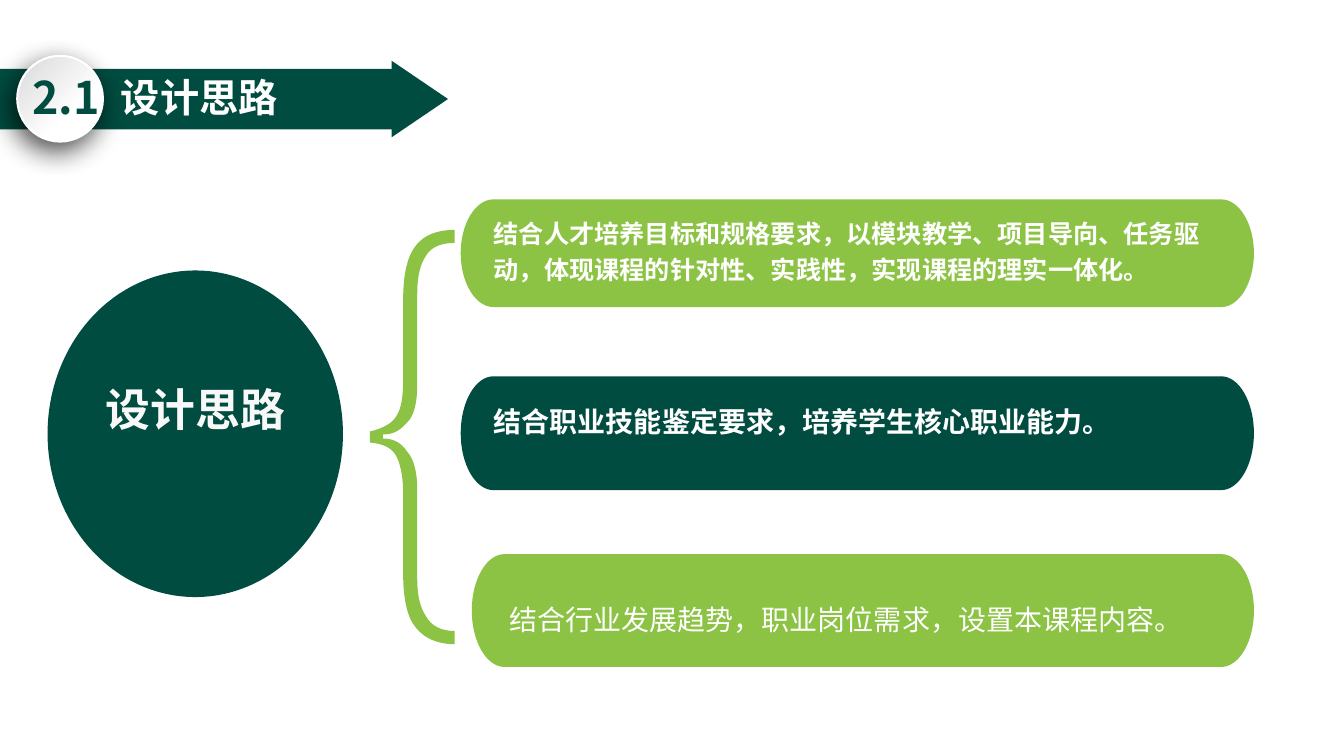
import lxml.etree
import pptx
import pptx.dml.color
import pptx.enum.shapes
import pptx.enum.text
import pptx.oxml
import pptx.oxml.ns
import pptx.util

Pt = pptx.util.Pt
SHAPES = pptx.enum.shapes.MSO_SHAPE
ALIGN = pptx.enum.text.PP_ALIGN
qn = pptx.oxml.ns.qn

FONT = "Noto Sans CJK SC"
DARK, LIME, WHITE = "004C40", "8CC344", "FFFFFF"
CAP_WIDTH = 23.4
CAPSULE_RIGHT = 895.7
ELLIPSE_PULL = 0.55

# Two numbers make a straight edge, six a Bézier curve, all in points.
BRACE_START = (298.1, 414)
BRACE_EDGES = [
    (298.1, 425.5, 300.2, 434.2, 304.6, 440.6),
    (308.2, 447.1, 315.4, 450.7, 324.7, 450.7),
    (324.7, 460.1),
    (312.5, 460.1, 303.1, 455.8, 297.4, 448.6),
    (290.9, 441.4, 288, 427.7, 288, 409),
    (288, 352.8),
    (288, 342, 286.6, 333.4, 283.7, 326.9),
    (280.8, 320.4, 274.3, 316.8, 264.2, 316.1),
    (264.2, 308.2),
    (273.6, 306, 280.1, 302.4, 283, 297.4),
    (286.6, 292.3, 288, 283.7, 288, 271.4),
    (288, 215.3),
    (288, 195.8, 290.9, 182.9, 297.4, 175),
    (303.1, 167.8, 312.5, 164.2, 324.7, 164.2),
    (324.7, 173.5),
    (315.4, 173.5, 308.2, 176.4, 304.6, 182.2),
    (300.2, 188.6, 298.1, 197.3, 298.1, 209.5),
    (298.1, 273.6),
    (298.1, 288, 295.9, 297.4, 290.2, 302.4),
    (285.1, 308.2, 280.1, 310.3, 273.6, 310.3),
    (273.6, 313.2),
    (280.8, 313.2, 286.6, 316.1, 290.9, 322.6),
    (295.9, 328.3, 298.1, 337.7, 298.1, 349.9),
]

# Capsule left, top, height and colour; text left, top, width, size, bold, wording
IDEAS = [
    (329.1, 142.4, 76.9, LIME, 345.6, 148.2, 530, 18, True,
     "结合人才培养目标和规格要求，以模块教学、项目导向、任务驱动，体现课程的针对性、实践性，实现课程的理实一体化。"),
    (329.1, 268.8, 81.3, DARK, 345.6, 280.8, 534.2, 20, True,
     "结合职业技能鉴定要求，培养学生核心职业能力。"),
    (337, 395.8, 80.6, LIME, 356.8, 422, 538.7, 20, False,
     "结合行业发展趋势，职业岗位需求，设置本课程内容。"),
]


def rgb(colour):
    return pptx.dml.color.RGBColor.from_string(colour)


def paint(shape, colour):
    shape.shadow.inherit = False
    shape.fill.solid()
    shape.fill.fore_color.rgb = rgb(colour)
    shape.line.fill.background()


def add_block(slide, kind, left, top, width, height, colour):
    block = slide.shapes.add_shape(kind, Pt(left), Pt(top), Pt(width), Pt(height))
    paint(block, colour)
    return block


def write(frame, wording, size, colour, bold=True, align=ALIGN.LEFT, spacing=None):
    frame.text = wording
    frame.vertical_anchor = pptx.enum.text.MSO_ANCHOR.TOP
    paragraph = frame.paragraphs[0]
    paragraph.alignment = align
    if spacing:
        paragraph.line_spacing = spacing
    font = paragraph.font
    font.name, font.size, font.bold = FONT, Pt(size), bold
    font.color.rgb = rgb(colour)
    latin = font._element.find(qn("a:latin"))
    east_asian = pptx.oxml.parse_xml(
        f'<a:ea {pptx.oxml.ns.nsdecls("a")} typeface="{FONT}"/>')
    latin.addnext(east_asian)


def add_text(slide, left, top, width, height, wording, size, colour, wrap=True, **style):
    box = slide.shapes.add_textbox(Pt(left), Pt(top), Pt(width), Pt(height))
    box.text_frame.word_wrap = wrap
    write(box.text_frame, wording, size, colour, **style)


def add_outline(slide, start, edges, colour):
    """Draw a closed freeform, then bend the edges that carry control points."""
    builder = slide.shapes.build_freeform(Pt(start[0]), Pt(start[1]), scale=1.0)
    builder.add_line_segments([(Pt(edge[-2]), Pt(edge[-1])) for edge in edges], close=True)
    outline = builder.convert_to_shape()
    paint(outline, colour)
    segments = list(outline._element.iter(qn("a:lnTo")))
    for segment, edge in zip(segments, edges):
        if len(edge) == 2:
            continue
        curve = lxml.etree.Element(qn("a:cubicBezTo"))
        for x, y in zip(edge[::2], edge[1::2]):
            lxml.etree.SubElement(curve, qn("a:pt"), x=str(Pt(x) - outline.left),
                                  y=str(Pt(y) - outline.top))
        segment.getparent().replace(segment, curve)


def add_capsule(slide, left, top, height, colour):
    middle, bottom, right = top + height / 2, top + height, CAPSULE_RIGHT
    inner_left, inner_right = left + CAP_WIDTH, right - CAP_WIDTH
    pull_x, pull_y = CAP_WIDTH * ELLIPSE_PULL, height / 2 * ELLIPSE_PULL
    edges = [
        (inner_right, top),
        (inner_right + pull_x, top, right, middle - pull_y, right, middle),
        (right, middle + pull_y, inner_right + pull_x, bottom, inner_right, bottom),
        (inner_left, bottom),
        (inner_left - pull_x, bottom, left, middle + pull_y, left, middle),
        (left, middle - pull_y, inner_left - pull_x, top, inner_left, top),
    ]
    add_outline(slide, (inner_left, top), edges, colour)


def add_badge(slide):
    badge = add_block(slide, SHAPES.OVAL, 12.3, 39.9, 61.2, 61.2, WHITE)
    badge.line.color.rgb = rgb(WHITE)
    badge.line.width = Pt(1.5)
    badge.fill.gradient()
    stops = zip(badge.fill.gradient_stops, ((0.34, WHITE), (0.96, "DBDBDD")))
    for stop, (position, colour) in stops:
        stop.position = position
        stop.color.rgb = rgb(colour)
    properties = badge._element.spPr
    gradient = properties.find(qn("a:gradFill"))
    gradient.remove(gradient.find(qn("a:lin")))
    radial = lxml.etree.SubElement(gradient, qn("a:path"), path="circle")
    lxml.etree.SubElement(radial, qn("a:fillToRect"), l="100000", t="100000")
    shadow = lxml.etree.SubElement(
        properties.find(qn("a:effectLst")), qn("a:outerShdw"), blurRad=str(Pt(20)),
        dist=str(Pt(7)), dir=str(120 * 60000), algn="ctr", rotWithShape="0")
    shade = lxml.etree.SubElement(shadow, qn("a:srgbClr"), val="000000")
    lxml.etree.SubElement(shade, qn("a:alpha"), val="70000")


def add_header(slide):
    add_block(slide, SHAPES.RECTANGLE, 0, 49.2, 280.1, 43.2, DARK)
    arrow_tip = add_block(slide, SHAPES.ISOSCELES_TRIANGLE, 272.5, 50.6, 54.7, 40.3, DARK)
    arrow_tip.rotation = 90
    title = slide.shapes.title
    title.left, title.top, title.width, title.height = Pt(79.2), Pt(49), Pt(558.7), Pt(62.6)
    title.text_frame.auto_size = pptx.enum.text.MSO_AUTO_SIZE.NONE
    write(title.text_frame, "设计思路", 28, WHITE)
    arrow_tip._element.addnext(title._element)
    add_badge(slide)
    add_text(slide, 15.8, 46.1, 63.4, 46.1, "2.1", 32, DARK, wrap=False)


def main():
    deck = pptx.Presentation()
    deck.slide_width, deck.slide_height = Pt(960), Pt(540)
    slide = deck.slides.add_slide(deck.slide_layouts.get_by_name("Title Only"))
    add_header(slide)
    add_outline(slide, BRACE_START, BRACE_EDGES, LIME)
    add_block(slide, SHAPES.OVAL, 34, 193.2, 211, 233.3, DARK)
    add_text(slide, 55.4, 269, 168.5, 46.1, "设计思路", 32, "F8F8F8", align=ALIGN.CENTER)
    for left, top, height, colour, text_left, text_top, width, size, bold, wording in IDEAS:
        add_capsule(slide, left, top, height, colour)
        add_text(slide, text_left, text_top, width, 36, wording, size, WHITE,
                 bold=bold, spacing=1.2)
    deck.save("out.pptx")


if __name__ == "__main__":
    main()
